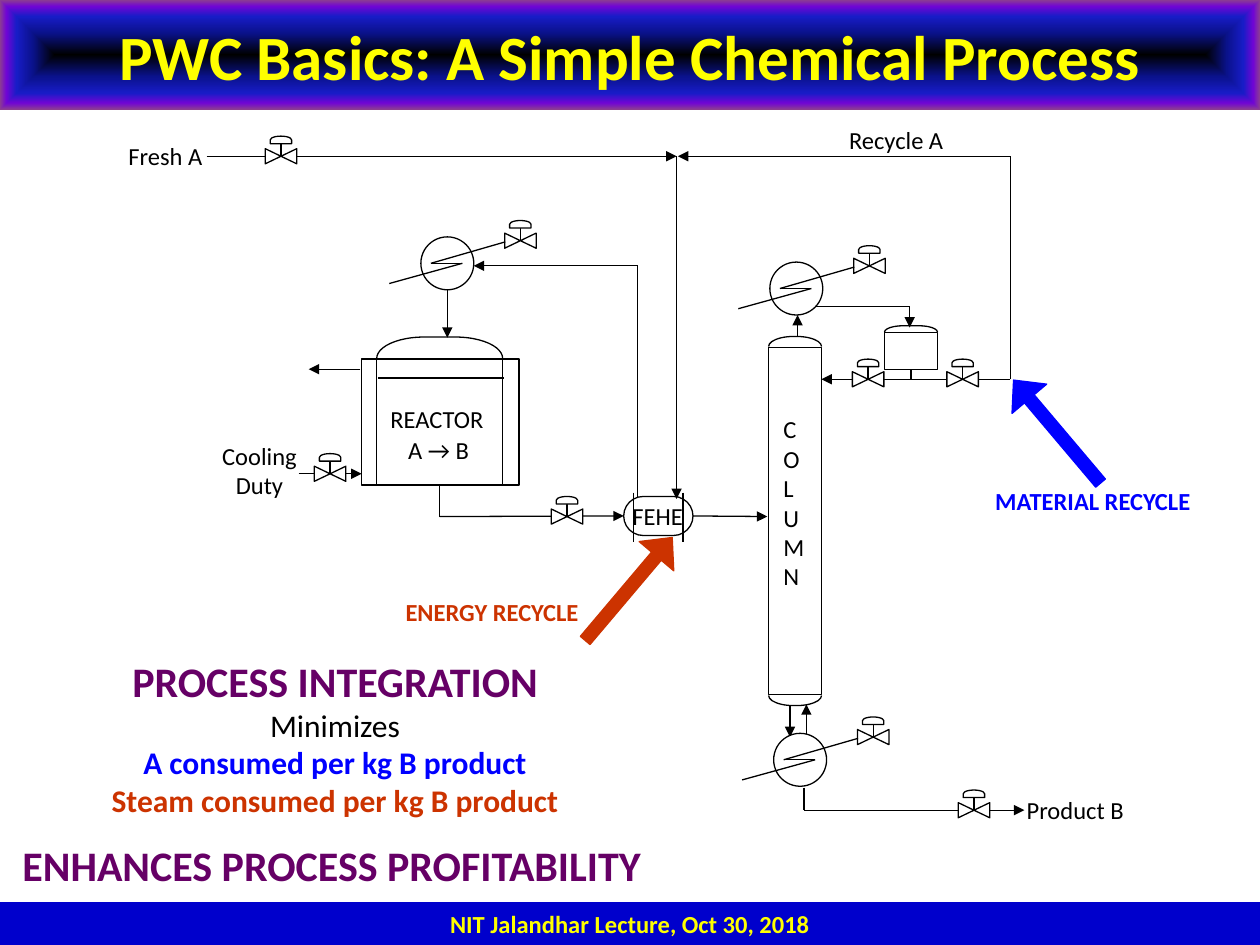
from lxml.etree import SubElement
from pptx import Presentation
from pptx.dml.color import RGBColor
from pptx.enum.shapes import MSO_CONNECTOR, MSO_SHAPE
from pptx.enum.text import MSO_ANCHOR, MSO_AUTO_SIZE, PP_ALIGN
from pptx.oxml import parse_xml
from pptx.oxml.ns import nsdecls, qn
from pptx.util import Inches, Pt

BLACK, WHITE, YELLOW = "000000", "FFFFFF", "FFFF00"
BLUE, RUST, PURPLE, NAVY = "0000FF", "CC3300", "660066", "0000CC"
TITLE_STOPS = [(0, "000000"), (40, "0A128C"), (70, "181CC7"), (88, "7005D4"), (100, "8C3D91")]
TOP, LEFT, BOTTOM, RIGHT = range(4)


def color(value):
    return RGBColor.from_string(value)


class Flowsheet:
    font_name = "Calibri"
    line_width = Pt(0.75)

    def __init__(self, slide):
        self.slide = slide
        self.shapes = slide.shapes

    def set_lines(self, frame, lines, align=None):
        for index, (words, size, tint, bold) in enumerate(lines):
            paragraph = frame.paragraphs[0] if index == 0 else frame.add_paragraph()
            paragraph.text = words
            paragraph.alignment = align
            paragraph.font.name = self.font_name
            paragraph.font.size = Pt(size)
            paragraph.font.bold = bold
            paragraph.font.color.rgb = color(tint)

    def title(self, words, width, height):
        banner = self.shapes.title
        banner.left, banner.top = Inches(0), Inches(0)
        banner.width, banner.height = Inches(width), Inches(height)
        stops = "".join(
            f'<a:gs pos="{position * 1000}"><a:srgbClr val="{tint}"/></a:gs>'
            for position, tint in TITLE_STOPS
        )
        banner._element.spPr.append(parse_xml(
            f'<a:gradFill {nsdecls("a")} rotWithShape="1"><a:gsLst>{stops}</a:gsLst>'
            '<a:path path="rect"><a:fillToRect l="50000" t="50000" r="50000" b="50000"/>'
            "</a:path></a:gradFill>"
        ))
        banner.text_frame.vertical_anchor = MSO_ANCHOR.MIDDLE
        self.set_lines(banner.text_frame, [(words, 36, YELLOW, True)], PP_ALIGN.CENTER)

    def footer(self, words, top, width, height):
        band = self.shape(MSO_SHAPE.RECTANGLE, 0, top, width, height, fill=NAVY, line=None)
        self.set_lines(band.text_frame, [(words, 14, YELLOW, True)], PP_ALIGN.CENTER)

    def paint(self, shape, fill, line):
        shape.shadow.inherit = False
        if fill:
            shape.fill.solid()
            shape.fill.fore_color.rgb = color(fill)
        else:
            shape.fill.background()
        if line:
            shape.line.color.rgb = color(line)
            shape.line.width = self.line_width
        else:
            shape.line.fill.background()

    def shape(self, preset, left, top, width, height, fill=None, line=BLACK, turn=0, adjust=()):
        shape = self.shapes.add_shape(
            preset, Inches(left), Inches(top), Inches(width), Inches(height)
        )
        shape.rotation = turn
        for index, value in enumerate(adjust):
            shape.adjustments[index] = value
        self.paint(shape, fill, line)
        return shape

    def centered(self, preset, x, y, width, height, **style):
        return self.shape(preset, x - width / 2, y - height / 2, width, height, **style)

    def dome(self, x, y, span, rise, turn, bend):
        self.centered(MSO_SHAPE.RIGHT_BRACKET, x, y, rise, span, turn=turn, adjust=[bend])

    def label(self, words, left, top, width, height, tint=BLACK, bold=False, align=None):
        lines = [(line, 14, tint, bold) for line in words.split("\n")]
        return self.text(lines, left, top, width, height, align)

    def text(self, lines, left, top, width, height, align=None):
        box = self.shapes.add_textbox(Inches(left), Inches(top), Inches(width), Inches(height))
        box.text_frame.word_wrap = False
        box.text_frame.auto_size = MSO_AUTO_SIZE.SHAPE_TO_FIT_TEXT
        self.set_lines(box.text_frame, lines, align)
        return box

    def pipe(self, *points, arrow=True, source=None, target=None):
        legs = list(zip(points, points[1:]))
        for index, (start, end) in enumerate(legs):
            leg = self.shapes.add_connector(
                MSO_CONNECTOR.STRAIGHT, *[Inches(value) for value in start + end]
            )
            leg.line.color.rgb = color(BLACK)
            leg.line.width = self.line_width
            if source and index == 0:
                leg.begin_connect(*source)
            if index == len(legs) - 1:
                if target:
                    leg.end_connect(*target)
                if arrow:
                    SubElement(leg.line._get_or_add_ln(), qn("a:tailEnd"), type="triangle")
            SubElement(leg._element.spPr, qn("a:effectLst"))

    def valve(self, x, y):
        self.centered(MSO_SHAPE.FLOWCHART_COLLATE, x, y, 0.12, 0.25, fill=WHITE, turn=270)
        self.pipe((x, y), (x, y - 0.1), arrow=False)
        self.centered(MSO_SHAPE.FLOWCHART_DELAY, x, y - 0.13, 0.06, 0.17, fill=WHITE, turn=270)

    def exchanger(self, x, y):
        self.valve(x + 0.58, y - 0.18)
        self.centered(MSO_SHAPE.OVAL, x, y, 0.42, 0.42, fill=WHITE)
        self.pipe((x + 0.46, y - 0.17), (x - 0.13, y), (x + 0.12, y), (x - 0.46, y + 0.16),
                  arrow=False)

    def level(self, start, *curves, steps=10):
        points = [start]
        for curve in curves:
            anchors = (points[-1],) + curve
            for step in range(1, steps + 1):
                t = step / steps
                weights = ((1 - t) ** 3, 3 * t * (1 - t) ** 2, 3 * t * t * (1 - t), t ** 3)
                points.append(tuple(
                    sum(weight * anchor[axis] for weight, anchor in zip(weights, anchors))
                    for axis in (0, 1)
                ))
        builder = self.shapes.build_freeform(*start, scale=Inches(1))
        builder.add_line_segments(points[1:], close=False)
        self.paint(builder.convert_to_shape(), None, BLACK)

    def pointer(self, left, top, turn, tint):
        self.shape(MSO_SHAPE.UP_ARROW, left, top, 0.36, 1.07, fill=tint, line=tint,
                   turn=turn, adjust=[0.28, 0.54])


def main():
    deck = Presentation()
    deck.slide_width, deck.slide_height = Inches(10), Inches(7.5)
    sheet = Flowsheet(deck.slides.add_slide(deck.slide_layouts[5]))
    sheet.footer("NIT Jalandhar Lecture, Oct 30, 2018", 7.16, 10, 0.34)
    sheet.title("PWC Basics: A Simple Chemical Process", 10, 0.87)

    sheet.shape(MSO_SHAPE.RECTANGLE, 6.1, 2.76, 0.42, 2.75)
    sheet.dome(6.31, 2.71, 0.42, 0.08, 270, 2.5)
    sheet.dome(6.31, 5.56, 0.42, 0.08, 90, 2.5)
    drum = sheet.shape(MSO_SHAPE.RECTANGLE, 7.02, 2.64, 0.42, 0.29)
    sheet.dome(7.23, 2.61, 0.42, 0.05, 270, 3)
    sheet.level((7.02, 2.73), ((7.08, 2.76), (7.14, 2.78), (7.18, 2.78)),
                ((7.23, 2.78), (7.23, 2.73), (7.27, 2.73)),
                ((7.31, 2.73), (7.41, 2.78), (7.43, 2.78)))
    reactor = sheet.shape(MSO_SHAPE.RECTANGLE, 2.99, 2.85, 1, 1)
    sheet.dome(3.49, 2.76, 1, 0.17, 270, 2.2)
    sheet.shape(MSO_SHAPE.RECTANGLE, 2.87, 2.85, 1.25, 1)
    sheet.level((2.99, 3.18), ((3.07, 3.14), (3.15, 3.1), (3.24, 3.1)),
                ((3.34, 3.1), (3.45, 3.18), (3.58, 3.18)),
                ((3.7, 3.18), (3.85, 3.14), (3.99, 3.1)))
    feed_heater = sheet.shape(MSO_SHAPE.ROUNDED_RECTANGLE, 4.95, 3.94, 0.55, 0.31, adjust=[0.5])
    for x in (5.03, 5.42):
        sheet.pipe((x, 3.91), (x, 4.3), arrow=False)

    sheet.pipe((1.64, 1.24), (5.37, 1.24))
    sheet.pipe((8.02, 3.01), (8.02, 1.24), (5.38, 1.24))
    sheet.pipe((5.37, 1.24), (5.37, 3.96))
    sheet.pipe((5.06, 3.95), (5.06, 2.11), (3.76, 2.11))
    sheet.pipe((3.55, 2.28), (3.55, 2.68))
    sheet.pipe((2.37, 3.76), (2.87, 3.76))
    sheet.pipe((2.86, 2.93), (2.45, 2.93))
    sheet.pipe((3.49, 3.85), (3.49, 4.1), (4.95, 4.1),
               source=(reactor, BOTTOM), target=(feed_heater, LEFT))
    sheet.pipe((5.5, 4.1), (6.09, 4.1), source=(feed_heater, RIGHT))
    sheet.pipe((6.33, 2.67), (6.33, 2.5))
    sheet.pipe((6.47, 2.43), (7.22, 2.43), (7.22, 2.6))
    sheet.pipe((7.23, 2.93), (7.23, 3.01), arrow=False, source=(drum, BOTTOM))
    sheet.pipe((8.02, 3.01), (6.52, 3.01))
    sheet.pipe((6.27, 5.6), (6.27, 5.85))
    sheet.pipe((6.4, 5.84), (6.4, 5.59))
    sheet.pipe((6.38, 6.25), (6.38, 6.43), (8.13, 6.43))

    for x, y in [(2.23, 1.24), (2.62, 3.76), (4.5, 4.1), (6.89, 3.01), (7.64, 3.01), (7.73, 6.43)]:
        sheet.valve(x, y)
    for x, y in [(3.55, 2.09), (6.32, 2.29), (6.35, 6.03)]:
        sheet.exchanger(x, y)

    sheet.label("Fresh A", 0.92, 1.07, 0.92, 0.33)
    sheet.label("Recycle A", 6.64, 0.94, 1.13, 0.33)
    sheet.label("Product B", 8.05, 6.26, 1.13, 0.33)
    sheet.label("REACTOR", 3, 3.16, 0.95, 0.34)
    sheet.label("A → B", 3.14, 3.4, 0.78, 0.33)
    sheet.label("Cooling\nDuty", 1.66, 3.45, 0.8, 0.57, align=PP_ALIGN.CENTER)
    sheet.label("FEHE", 4.92, 3.93, 0.61, 0.34)
    sheet.label("\n".join("COLUMN"), 6.12, 3.24, 0.36, 1.5)

    sheet.pointer(4.81, 4.14, 40.2, RUST)
    sheet.label("ENERGY RECYCLE", 3.12, 4.69, 1.58, 0.34, RUST, True)
    sheet.pointer(8.21, 2.89, 319.8, BLUE)
    sheet.label("MATERIAL RECYCLE", 7.8, 3.81, 1.76, 0.34, BLUE, True)

    benefits = sheet.text([
        ("PROCESS INTEGRATION", 24, PURPLE, True),
        ("Minimizes", 18, BLACK, False),
        ("A consumed per kg B product", 18, BLUE, True),
        ("Steam consumed per kg B product", 18, RUST, True),
        ("ENHANCES PROCESS PROFITABILITY", 24, PURPLE, True),
    ], 0.08, 5.15, 5.16, 1.99, PP_ALIGN.CENTER)
    conclusion = benefits.text_frame.paragraphs[-1]
    conclusion.alignment = PP_ALIGN.LEFT
    conclusion.space_before = Pt(12)

    deck.save("out.pptx")


if __name__ == "__main__":
    main()
